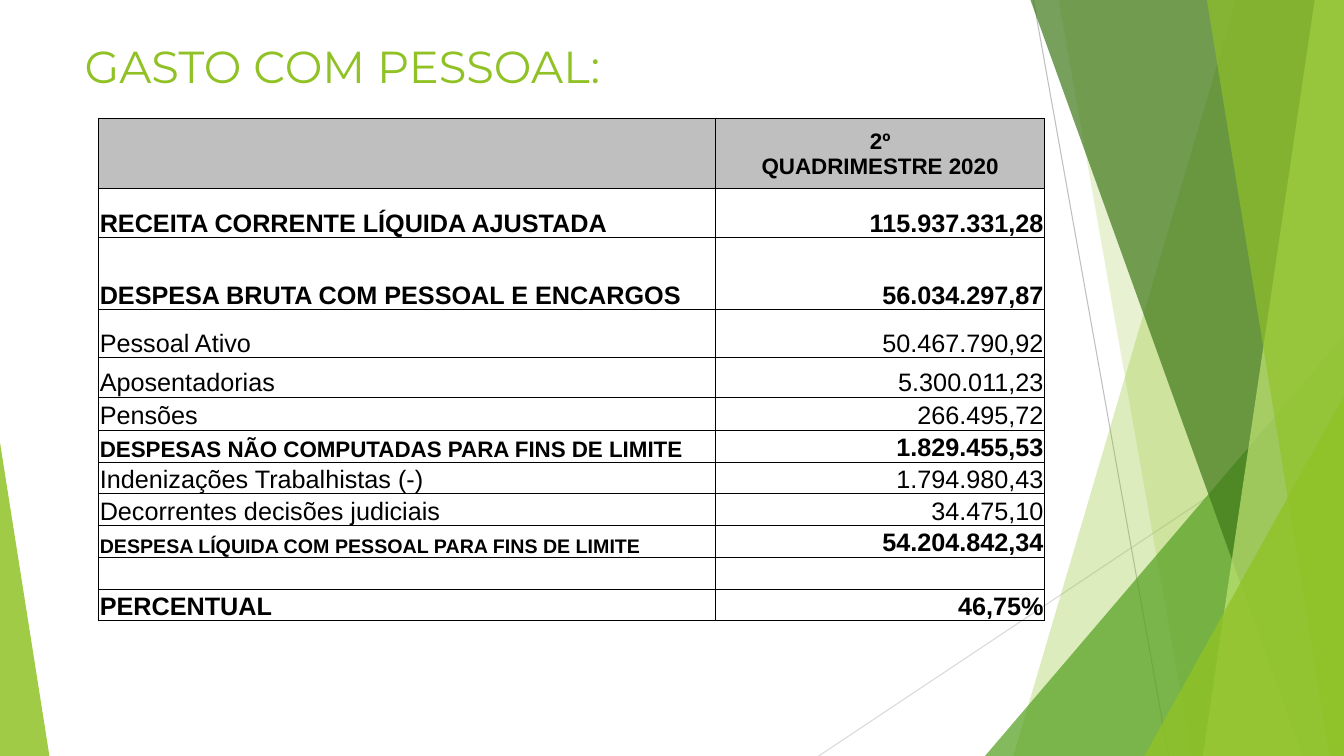
from lxml import etree
from pptx import Presentation
from pptx.dml.color import RGBColor
from pptx.enum.shapes import MSO_CONNECTOR
from pptx.enum.text import MSO_ANCHOR, PP_ALIGN
from pptx.oxml.ns import qn
from pptx.util import Inches, Pt

LINE = MSO_CONNECTOR.STRAIGHT
TOP, MIDDLE, BOTTOM = MSO_ANCHOR.TOP, MSO_ANCHOR.MIDDLE, MSO_ANCHOR.BOTTOM
LEFT, CENTER, RIGHT = PP_ALIGN.LEFT, PP_ALIGN.CENTER, PP_ALIGN.RIGHT
WIDTH, HEIGHT = 13.33, 7.5
TITLE_ONLY = 5

COLORS = {
    "lime": "90C226", "pale": "C0E474", "green": "54A021", "dark": "3F7819",
    "silver": "D9D9D9", "gray": "BFBFBF", "black": "000000",
}

# Top inset and foot inset from the right edge, top, colour, opacity in percent
SHARDS = [
    (1.07, 3.28, 0, "lime", 30),
    (2.83, 1.51, 0, "lime", 20),
    (0, 3.56, 3.33, "green", 72),
    (3.11, 0.41, 0, "dark", 70),
    (0.29, 1.4, 0, "pale", 70),
    (1.36, 0.14, 0, "lime", 65),
    (0, 1.98, 3.93, "lime", 80),
]

# Label, value, label size, bold, row height (None: equal share of the rest)
ROWS = [
    ("RECEITA CORRENTE LÍQUIDA AJUSTADA", "115.937.331,28", 18, True, 0.49),
    ("DESPESA BRUTA COM PESSOAL E ENCARGOS", "56.034.297,87", 18, True, 0.71),
    ("Pessoal Ativo", "50.467.790,92", 18, False, 0.48),
    ("Aposentadorias", "5.300.011,23", 18, False, 0.39),
    ("Pensões", "266.495,72", 18, False, 0.33),
    ("DESPESAS NÃO COMPUTADAS PARA FINS DE LIMITE", "1.829.455,53", 16, True, None),
    ("Indenizações Trabalhistas (-)", "1.794.980,43", 18, False, None),
    ("Decorrentes decisões judiciais", "34.475,10", 18, False, None),
    ("DESPESA LÍQUIDA COM PESSOAL PARA FINS DE LIMITE", "54.204.842,34", 14, True, None),
    ("", "", 18, False, None),
    ("PERCENTUAL", "46,75%", 18, True, None),
]
HEAD = ["2º", "QUADRIMESTRE 2020"]
HEAD_HEIGHT = 0.69


def color(name):
    return RGBColor.from_string(COLORS[name])


def add_run(para, text, font, size, tint, bold=False):
    run = para.add_run()
    run.text = text
    run.font.name = font
    run.font.size = Pt(size)
    run.font.bold = bold
    run.font.color.rgb = color(tint)


def add_line(slide, start, end, tint):
    line = slide.shapes.add_connector(LINE, *map(Inches, start + end))
    line.line.color.rgb = color(tint)
    line.line.width = Pt(0.75)
    etree.SubElement(line.element.spPr, qn("a:effectLst"))


def add_shard(slide, points, tint, alpha):
    points = [(Inches(x), Inches(y)) for x, y in points]
    draft = slide.shapes.build_freeform(*points[0], scale=1.0)
    draft.add_line_segments(points[1:], close=True)
    shard = draft.convert_to_shape()
    shard.shadow.inherit = False
    shard.line.fill.background()
    shard.fill.solid()
    shard.fill.fore_color.rgb = color(tint)
    tone = shard.element.spPr.find(qn("a:solidFill"))[0]
    etree.SubElement(tone, qn("a:alpha"), val=str(alpha * 1000))


def add_decor(slide, box):
    left, top, width, height = box
    right, foot = left + width, top + height
    add_line(slide, (right - 5.21, foot), (right, top + 4.03), "silver")
    add_line(slide, (right - 3.08, top), (right - 1.74, foot), "gray")
    for peak, base, drop, tint, alpha in SHARDS:
        points = [(right - peak, top + drop), (right - base, foot), (right, foot)]
        if peak:
            points.append((right, top + drop))
        add_shard(slide, points, tint, alpha)
    add_shard(slide, [(left, top + 4.39), (left + 0.49, foot), (left, foot)], "lime", 85)


def add_title(slide, box):
    title = slide.shapes.title
    title.left, title.top, title.width, title.height = map(Inches, box)
    frame = title.text_frame
    frame.word_wrap = True
    frame.vertical_anchor = TOP
    para = frame.paragraphs[0]
    para.alignment = LEFT
    add_run(para, "GASTO COM PESSOAL:", "Montserrat", 32, "lime")
    title.element.getparent().append(title.element)


def set_border(cell):
    props = cell._tc.get_or_add_tcPr()
    for spot, side in enumerate(("lnL", "lnR", "lnT", "lnB")):
        edge = etree.Element(qn("a:" + side), w=str(Pt(0.75)))
        fill = etree.SubElement(edge, qn("a:solidFill"))
        etree.SubElement(fill, qn("a:srgbClr"), val=COLORS["black"])
        props.insert(spot, edge)


def fill_cell(cell, lines, size, bold, align, anchor, tint=None):
    cell.margin_left = cell.margin_right = cell.margin_top = Inches(0.01)
    cell.margin_bottom = 0
    cell.vertical_anchor = anchor
    if tint:
        cell.fill.solid()
        cell.fill.fore_color.rgb = color(tint)
    else:
        cell.fill.background()
    set_border(cell)
    frame = cell.text_frame
    for spot, text in enumerate(lines):
        para = frame.add_paragraph() if spot else frame.paragraphs[0]
        para.alignment = align
        if text:
            add_run(para, text, "Arial", size, "black", bold)


def add_costs(slide, box):
    table = slide.shapes.add_table(len(ROWS) + 1, 2, *map(Inches, box)).table
    table.first_row = table.horz_banding = False
    table.columns[0].width = Inches(6.12)
    table.columns[1].width = Inches(box[2] - 6.12)

    heights = [HEAD_HEIGHT] + [row[-1] for row in ROWS]
    share = (box[3] - sum(h or 0 for h in heights)) / heights.count(None)
    for row, height in zip(table.rows, heights):
        row.height = Inches(height or share)

    fill_cell(table.cell(0, 0), [], 16, True, LEFT, MIDDLE, "gray")
    fill_cell(table.cell(0, 1), HEAD, 16, True, CENTER, MIDDLE, "gray")
    for spot, (label, value, size, bold, _) in enumerate(ROWS, 1):
        fill_cell(table.cell(spot, 0), [label], size, bold, LEFT, BOTTOM)
        fill_cell(table.cell(spot, 1), [value], 18, bold, RIGHT, BOTTOM)


def main():
    deck = Presentation()
    deck.slide_width, deck.slide_height = Inches(WIDTH), Inches(HEIGHT)
    slide = deck.slides.add_slide(deck.slide_layouts[TITLE_ONLY])
    add_decor(slide, (0, 0, WIDTH, HEIGHT))
    add_title(slide, (0.74, 0.33, 9.4, 0.8))
    add_costs(slide, (0.98, 1.18, 9.38, 4.98))
    deck.save("out.pptx")


if __name__ == "__main__":
    main()
